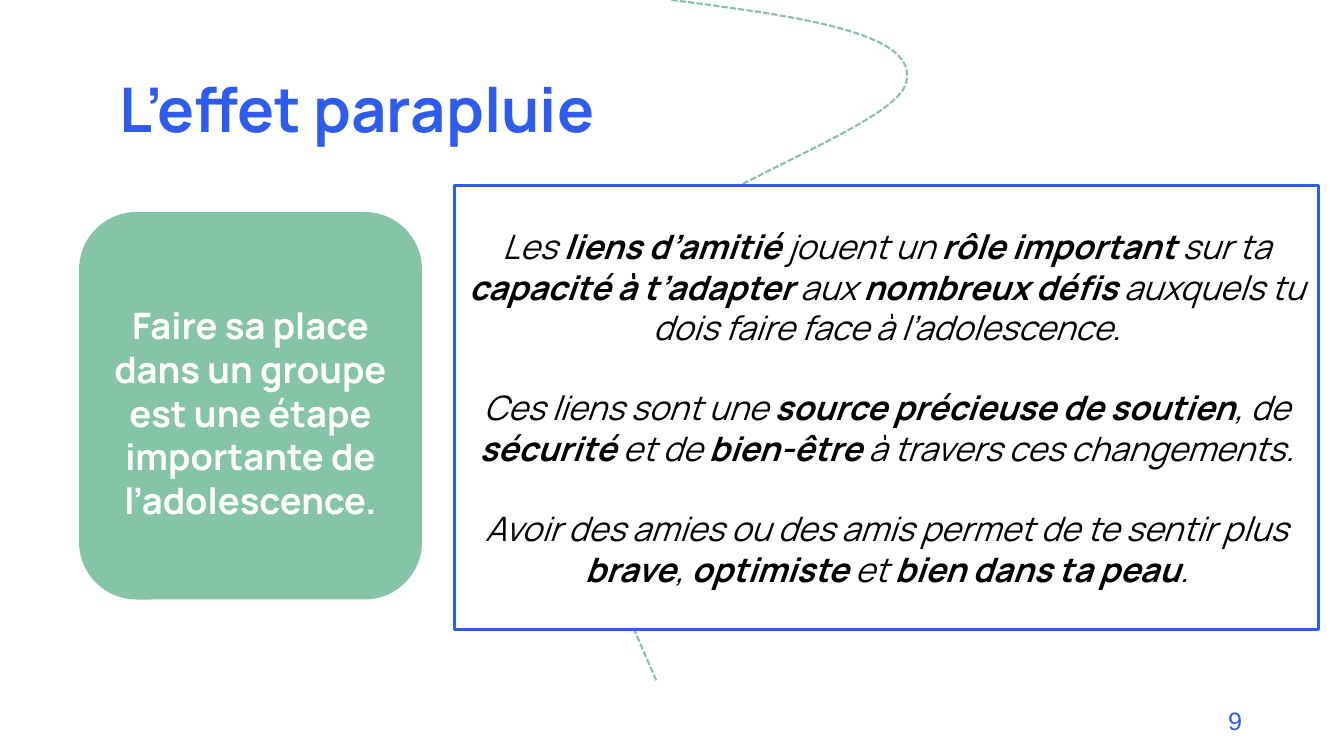
import pptx
import pptx.util
import pptx.dml.color
import pptx.enum.dml
import pptx.enum.shapes
import pptx.enum.text

Cm, Pt = pptx.util.Cm, pptx.util.Pt
Align = pptx.enum.text.PP_ALIGN
Anchor = pptx.enum.text.MSO_ANCHOR
Shape = pptx.enum.shapes.MSO_SHAPE
BLUE, GREEN, WHITE, BLACK = "2F5CEE", "86C4A7", "FFFFFF", "000000"


def color(code):
    return pptx.dml.color.RGBColor.from_string(code)


def bezier(a, b, c, d, t):
    u = 1 - t
    return tuple(u**3 * p + 3 * u * u * t * q + 3 * u * t * t * r + t**3 * s
                 for p, q, r, s in zip(a, b, c, d))


class Deck:
    font = "Manrope"

    def __init__(self, wide, high):
        self.prs = pptx.Presentation()
        self.prs.slide_width, self.prs.slide_height = Cm(wide), Cm(high)
        self.slide = self.prs.slides.add_slide(self.prs.slide_layouts[6])

    def outline(self, shape, code, width):
        shape.shadow.inherit = False
        shape.line.color.rgb = color(code)
        shape.line.width = Pt(width)

    def box(self, kind, place, fill, line, width):
        shape = self.slide.shapes.add_shape(kind, *map(Cm, place))
        shape.fill.solid()
        shape.fill.fore_color.rgb = color(fill)
        self.outline(shape, line, width)
        return shape

    def style(self, run, size, code, font=None, bold=False, italic=False):
        run.font.name = font or self.font
        run.font.size = Pt(size)
        run.font.bold, run.font.italic = bold, italic
        run.font.color.rgb = color(code)

    def text(self, place, words, size, code, align=Align.LEFT,
             anchor=Anchor.TOP, space=1.0, **look):
        frame = self.slide.shapes.add_textbox(*map(Cm, place)).text_frame
        frame.word_wrap = True
        frame.vertical_anchor = anchor
        frame.text = words
        para = frame.paragraphs[0]
        para.alignment, para.line_spacing = align, space
        self.style(para.runs[0], size, code, **look)

    def rich(self, shape, lines, size, code, gap):
        """Fill a shape with italic paragraphs; *words* between stars are bold."""
        frame = shape.text_frame
        frame.word_wrap = True
        frame.vertical_anchor = Anchor.MIDDLE
        for i, line in enumerate(lines):
            para = frame.add_paragraph() if i else frame.paragraphs[0]
            para.alignment = Align.CENTER
            if i:
                para.space_before = Pt(gap)
            for j, part in enumerate(line.split("*")):
                run = para.add_run()
                run.text = part
                self.style(run, size, code, bold=j % 2 == 1, italic=True)

    def curve(self, points, code, width, steps=24):
        path = [points[0]]
        for i in range(0, len(points) - 1, 3):
            path += [bezier(*points[i:i + 4], k / steps)
                     for k in range(1, steps + 1)]
        path = [(Cm(x), Cm(y)) for x, y in path]
        form = self.slide.shapes.build_freeform(*path[0])
        form.add_line_segments(path[1:], close=False)
        shape = form.convert_to_shape()
        shape.fill.background()
        self.outline(shape, code, width)
        shape.line.dash_style = pptx.enum.dml.MSO_LINE.SQUARE_DOT


def main():
    deck = Deck(33.87, 19.05)

    # Page number and title
    deck.text((23.93, 17.65, 7.62, 1.02), "9", 18, BLUE,
              align=Align.RIGHT, font="Arial")
    deck.text((2.77, 0.99, 29.21, 3.68), "L’effet parapluie", 44, BLUE,
              anchor=Anchor.MIDDLE, space=0.9, bold=True)

    # Dashed trail behind the panel
    deck.curve([(16.92, 0), (20.07, 0.41), (23.22, 0.81), (22.83, 2.11),
                (22.45, 3.4), (15.67, 5.31), (14.61, 7.8),
                (13.56, 10.31), (15.04, 13.72), (16.54, 17.15)], GREEN, 1.5)

    # Green card
    deck.box(Shape.ROUNDED_RECTANGLE, (2.01, 5.36, 8.61, 9.73),
             GREEN, GREEN, 1)
    deck.text((2.44, 7.52, 7.75, 5.82),
              "Faire sa place dans un groupe est une étape importante "
              "de l’adolescence.", 26, WHITE, align=Align.CENTER, bold=True)

    # Framed panel
    panel = deck.box(Shape.RECTANGLE, (11.46, 4.67, 21.77, 11.2),
                     WHITE, BLUE, 2.25)
    deck.rich(panel, [
        "Les *liens d’amitié *jouent un *rôle important *sur ta "
        "*capacité à t’adapter *aux *nombreux défis *auxquels tu dois "
        "faire face à l’adolescence.",
        "Ces liens sont une *source précieuse de soutien*, de *sécurité* "
        "et de *bien-être* à travers ces changements.",
        "Avoir des amies ou des amis permet de te sentir plus *brave*, "
        "*optimiste* et *bien dans ta peau*.",
    ], 24, BLACK, gap=28.8)

    deck.prs.save("out.pptx")


if __name__ == "__main__":
    main()
